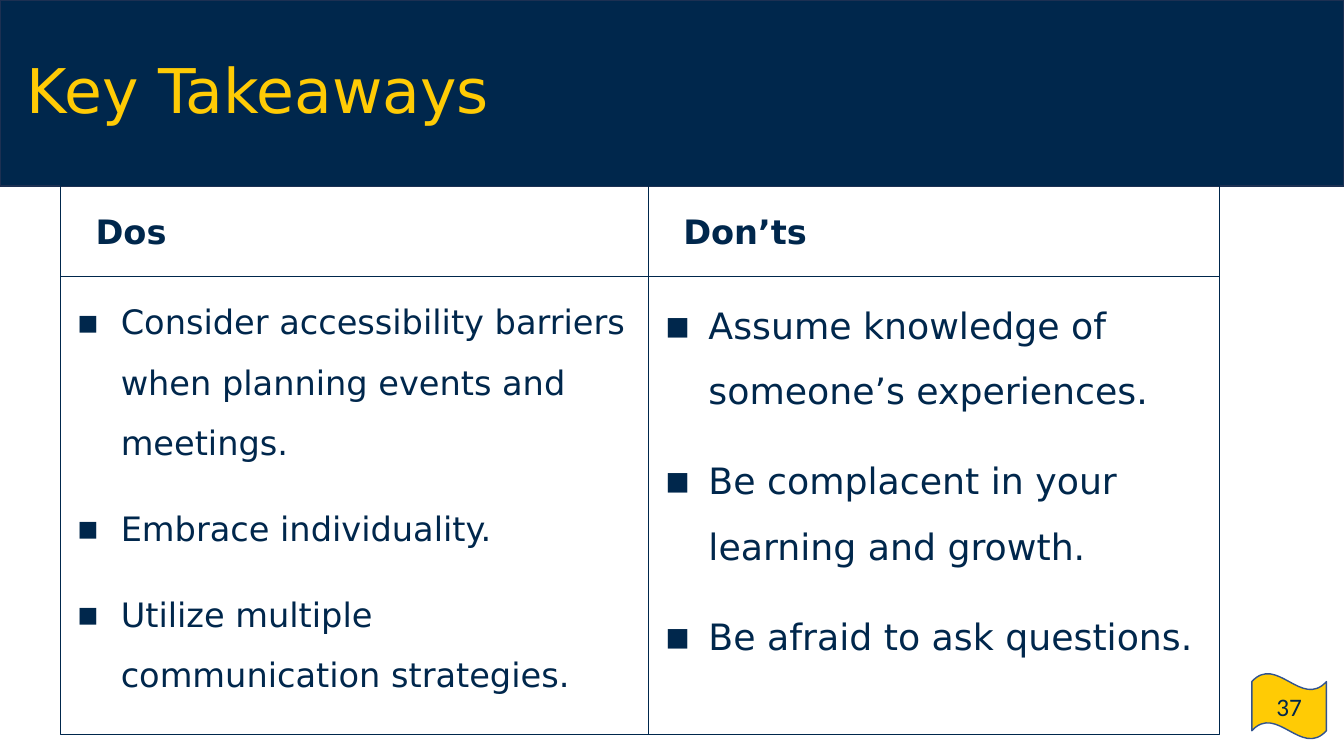
from dataclasses import dataclass

from lxml.etree import SubElement
from pptx import Presentation
from pptx.dml.color import RGBColor
from pptx.enum.shapes import MSO_SHAPE
from pptx.enum.text import MSO_ANCHOR, PP_ALIGN
from pptx.oxml.ns import qn
from pptx.shapes.autoshape import Shape
from pptx.slide import Slide
from pptx.util import Pt

COLORS = {
    "navy": "00274C",
    "maize": "FFCB05",
    "header_edge": "1C3052",
    "flag_edge": "31538F",
}
Box = tuple[float, float, float, float]

SLIDE_WIDTH, SLIDE_HEIGHT = 960, 540
HEADING_TOP, HEADING_HEIGHT = 132.5, 64.8
ADVICE_TOP, ADVICE_HEIGHT = HEADING_TOP + HEADING_HEIGHT, 327.6


@dataclass
class AdviceColumn:
    heading: str
    left: float
    width: float
    size: float
    bullet_percent: int
    advice: list[str]


COLUMNS = [
    AdviceColumn("Dos", 43.2, 419.8, 24, 100, [
        "Consider accessibility barriers when planning events and meetings.",
        "Embrace individuality.",
        "Utilize multiple communication strategies.",
    ]),
    AdviceColumn("Don’ts", 463, 408.2, 25.9, 108, [
        "Assume knowledge of someone’s experiences.",
        "Be complacent in your learning and growth.",
        "Be afraid to ask questions.",
    ]),
]


def rgb(name: str) -> RGBColor:
    return RGBColor.from_string(COLORS[name])


def add_panel(slide: Slide, box: Box, edge: str, edge_width: float = 1,
              fill: str | None = None,
              preset: MSO_SHAPE = MSO_SHAPE.RECTANGLE) -> Shape:
    panel = slide.shapes.add_shape(preset, *map(Pt, box))
    panel.shadow.inherit = False
    if fill:
        panel.fill.solid()
        panel.fill.fore_color.rgb = rgb(fill)
    else:
        panel.fill.background()
    panel.line.color.rgb = rgb(edge)
    panel.line.width = Pt(edge_width)
    return panel


def write_text(shape: Shape, lines: list[str], *, size: float,
               color: str = "navy", font: str = "DejaVu Sans",
               bold: bool = False, align: PP_ALIGN = PP_ALIGN.LEFT,
               anchor: MSO_ANCHOR = MSO_ANCHOR.MIDDLE,
               line_spacing: float = 1, space_before: float = 0,
               margin: float = 0, indent: float = 0,
               bullet_percent: int | None = None) -> None:
    frame = shape.text_frame
    frame.word_wrap = True
    frame.vertical_anchor = anchor
    for index, line in enumerate(lines):
        paragraph = frame.paragraphs[0] if index == 0 else frame.add_paragraph()
        paragraph.alignment = align
        paragraph.line_spacing = line_spacing
        paragraph.space_before = Pt(space_before)
        run = paragraph.add_run()
        run.text = line
        run.font.name = font
        run.font.size = Pt(size)
        run.font.bold = bold
        run.font.color.rgb = rgb(color)

        # Indents and bullet
        properties = paragraph._p.get_or_add_pPr()
        properties.set("marL", str(Pt(margin)))
        properties.set("indent", str(Pt(indent)))
        if bullet_percent:
            bullet_color = SubElement(properties, qn("a:buClr"))
            SubElement(bullet_color, qn("a:srgbClr"), val=COLORS[color])
            SubElement(properties, qn("a:buSzPct"), val=str(bullet_percent * 1000))
            SubElement(properties, qn("a:buFont"), typeface=font)
            SubElement(properties, qn("a:buChar"), char="▪")


def add_column(slide: Slide, column: AdviceColumn) -> None:
    heading = add_panel(slide, (column.left, HEADING_TOP, column.width, HEADING_HEIGHT),
                        "navy", 0.75)
    write_text(heading, [column.heading], size=24, bold=True,
               space_before=18, margin=36, indent=-18)
    advice = add_panel(slide, (column.left, ADVICE_TOP, column.width, ADVICE_HEIGHT),
                       "navy", 0.75)
    write_text(advice, column.advice, size=column.size, anchor=MSO_ANCHOR.TOP,
               line_spacing=1.5, space_before=18, margin=36, indent=-31.5,
               bullet_percent=column.bullet_percent)


def main() -> None:
    deck = Presentation()
    deck.slide_width, deck.slide_height = Pt(SLIDE_WIDTH), Pt(SLIDE_HEIGHT)
    slide = deck.slides.add_slide(deck.slide_layouts[6])

    # Header band
    add_panel(slide, (0, 0, SLIDE_WIDTH, 133), "header_edge", fill="navy")

    # Page number flag
    page_flag = add_panel(slide, (894.2, 481, 53.3, 46.8), "flag_edge",
                          fill="maize", preset=MSO_SHAPE.WAVE)
    write_text(page_flag, ["37"], size=18, font="Calibri", align=PP_ALIGN.CENTER)

    # Title
    title = slide.shapes.add_textbox(Pt(12.2), Pt(14.4), Pt(735), Pt(104.4))
    write_text(title, ["Key Takeaways"], size=44, color="maize", line_spacing=0.9)

    # Dos and don'ts
    for column in COLUMNS:
        add_column(slide, column)

    deck.save("out.pptx")


if __name__ == "__main__":
    main()
